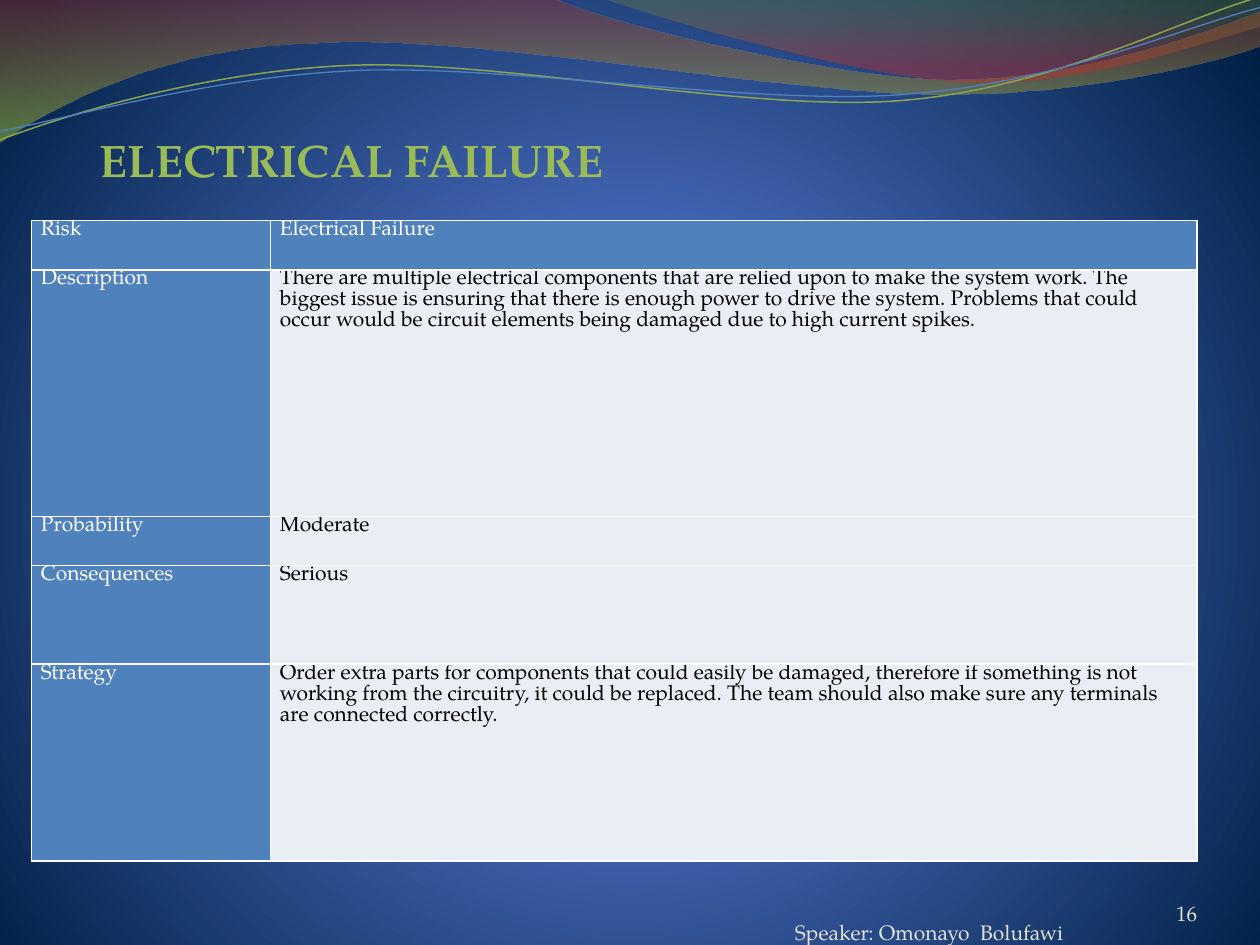
from lxml import etree
from pptx import Presentation
from pptx.dml.color import RGBColor
from pptx.enum.text import MSO_ANCHOR, PP_ALIGN
from pptx.oxml import parse_xml
from pptx.oxml.ns import nsdecls, qn
from pptx.util import Pt

BOTTOM, TOP = MSO_ANCHOR.BOTTOM, MSO_ANCHOR.TOP
LEFT, RIGHT = PP_ALIGN.LEFT, PP_ALIGN.RIGHT

FONT = "TeX Gyre Pagella"
BLUE, GREEN, PALE = "4F81BD", "9BBB59", "E9EDF4"
WHITE, BLACK, GREY = "FFFFFF", "000000", "E3E1D7"

# Outlines: a pair is a straight step, six numbers are a Bezier step
WAVE = [(0, 0), (316.8, -0.7),
        (342.7, 12.2, 478.1, 45.4, 545.8, 45.4),
        (614.2, 45.4, 689.8, 18.7, 720, 6.5), (720.7, 25.9),
        (707.8, 31.7, 626.4, 54.7, 537.1, 54),
        (447.8, 54, 275, 20.2, 185, 24.5),
        (92.9, 25.9, 33.1, 59.8, -0.7, 81.4)]
CREST = [(344.9, -0.7),
         (366.5, 7.9, 491, 44.6, 553.7, 46.8),
         (616.3, 49.7, 691.9, 23, 720, 15.1), (720, 0)]
UPPER = [(0, 79.9),
         (34.6, 67, 113.8, 41, 199.4, 37.4),
         (284.4, 33.8, 427, 64.1, 513.4, 57.6),
         (599.8, 51.1, 675.4, 10.8, 718.6, -1.4)]
LOWER = [(0, 74.9),
         (33.8, 69.1, 118.1, 43.9, 203.8, 40.3),
         (290.2, 36.7, 429.8, 60.5, 516.2, 54),
         (601.9, 48.2, 677.5, 15.1, 720, 4.3)]

ROWS = [
    ("Risk", "Electrical Failure", 28.15),
    ("Description", "There are multiple electrical components that are relied "
     "upon to make the system work. The biggest issue is ensuring that there "
     "is enough power to drive the system. Problems that could occur would be "
     "circuit elements being damaged due to high current spikes.", 140.9),
    ("Probability", "Moderate", 28.15),
    ("Consequences", "Serious", 56.3),
    ("Strategy", "Order extra parts for components that could easily be "
     "damaged, therefore if something is not working from the circuitry, it "
     "could be replaced. The team should also make sure any terminals are "
     "connected correctly.", 112.6),
]


def color(code):
    return RGBColor.from_string(code)


def style(frame, size, code, bold=False, align=LEFT):
    for para in frame.paragraphs:
        para.alignment = align
        for run in para.runs:
            font = run.font
            font.name, font.size, font.bold = FONT, Pt(size), bold
            font.color.rgb = color(code)


def blend(props, stops, shade):
    """Put a gradient in the place of an empty fill."""
    marks = "".join(
        f'<a:gs pos="{pos * 1000}"><a:srgbClr val="{code}">'
        f'<a:alpha val="{alpha * 1000}"/></a:srgbClr></a:gs>'
        for pos, code, alpha in stops)
    grad = parse_xml(f'<a:gradFill {nsdecls("a")} rotWithShape="1">'
                     f'<a:gsLst>{marks}</a:gsLst>{shade}</a:gradFill>')
    props.replace(props.find(qn("a:noFill")), grad)


def bend(shape, steps):
    """Turn the straight sides that have handles into Bezier curves."""
    sides = list(shape._element.iter(qn("a:lnTo")))
    for side, step in zip(sides, steps):
        if len(step) == 6:
            curve = etree.Element(qn("a:cubicBezTo"))
            for x, y in zip(step[::2], step[1::2]):
                etree.SubElement(curve, qn("a:pt"), x=str(Pt(x) - shape.left),
                                 y=str(Pt(y) - shape.top))
            side.getparent().replace(side, curve)


def add_free(slide, steps, close):
    first, *rest = [(Pt(step[-2]), Pt(step[-1])) for step in steps]
    pen = slide.shapes.build_freeform(*first)
    pen.add_line_segments(rest, close=close)
    shape = pen.convert_to_shape()
    bend(shape, steps[1:])
    shape.shadow.inherit = False
    shape.fill.background()
    return shape


def add_wave(slide, steps, stops):
    shape = add_free(slide, steps, True)
    shape.line.fill.background()
    blend(shape._element.spPr, stops, '<a:lin ang="5400000" scaled="0"/>')


def add_curve(slide, steps, code, width):
    line = add_free(slide, steps, False).line
    line.color.rgb = color(code)
    line.width = Pt(width)


def add_text(slide, text, box, size, code, anchor=BOTTOM, inset=(0, 0),
             **look):
    frame = slide.shapes.add_textbox(*map(Pt, box)).text_frame
    frame.margin_left, frame.margin_top = map(Pt, inset)
    frame.margin_right = frame.margin_bottom = 0
    frame.word_wrap = True
    frame.vertical_anchor = anchor
    frame.text = text
    style(frame, size, code, **look)


def add_edge(cell, side):
    edge = etree.SubElement(cell._tc.get_or_add_tcPr(), qn(f"a:ln{side}"),
                            w=str(Pt(1)))
    fill = etree.SubElement(edge, qn("a:solidFill"))
    etree.SubElement(fill, qn("a:srgbClr"), val=WHITE)


def fill_cell(cell, text, head):
    for side in "LRTB":
        add_edge(cell, side)
    cell.fill.solid()
    cell.fill.fore_color.rgb = color(BLUE if head else PALE)
    cell.margin_left = cell.margin_right = Pt(5.4)
    cell.margin_top = cell.margin_bottom = 0
    cell.text_frame.text = text
    cell.text_frame.paragraphs[0].line_spacing = Pt(12)
    style(cell.text_frame, 12, WHITE if head else BLACK)


def add_grid(slide):
    high = sum(row[2] for row in ROWS)
    table = slide.shapes.add_table(len(ROWS), 2, Pt(18), Pt(126),
                                   Pt(666), Pt(high)).table
    for col, width in zip(table.columns, (136.6, 529.4)):
        col.width = Pt(width)
    for r, (*texts, height) in enumerate(ROWS):
        table.rows[r].height = Pt(height)
        for c, text in enumerate(texts):
            fill_cell(table.cell(r, c), text, r == 0 or c == 0)


def main():
    deck = Presentation()
    deck.slide_width, deck.slide_height = Pt(720), Pt(540)
    slide = deck.slides.add_slide(deck.slide_layouts[6])

    # Background
    slide.background.fill.background()
    blend(slide._element.find(".//" + qn("p:bgPr")),
          [(0, "4D75D6", 100), (25, "4E72C7", 100), (100, "001F44", 100)],
          '<a:path path="circle"><a:fillToRect l="10000" t="110000" '
          'r="10000" b="100000"/></a:path>')

    # Waves along the top
    add_wave(slide, WAVE, [(0, "973330", 45), (100, "95C238", 55)])
    add_wave(slide, CREST, [(0, "769537", 30), (80, "BE3330", 45)])
    add_curve(slide, UPPER, "89A54F", 0.85)
    add_curve(slide, LOWER, BLUE, 0.75)

    # Title, footer and page number
    add_text(slide, "ELECTRICAL FAILURE", (18, 72, 684, 450), 26, GREEN,
             anchor=TOP, inset=(39, 3.6), bold=True)
    add_text(slide, "Speaker: Omonayo  Bolufawi", (454.3, 511.2, 264.2, 28.8),
             12, GREY)
    add_text(slide, "16", (624, 500.4, 60, 28.8), 12, GREY, align=RIGHT)

    # Risk table
    add_grid(slide)
    deck.save("out.pptx")


if __name__ == "__main__":
    main()
